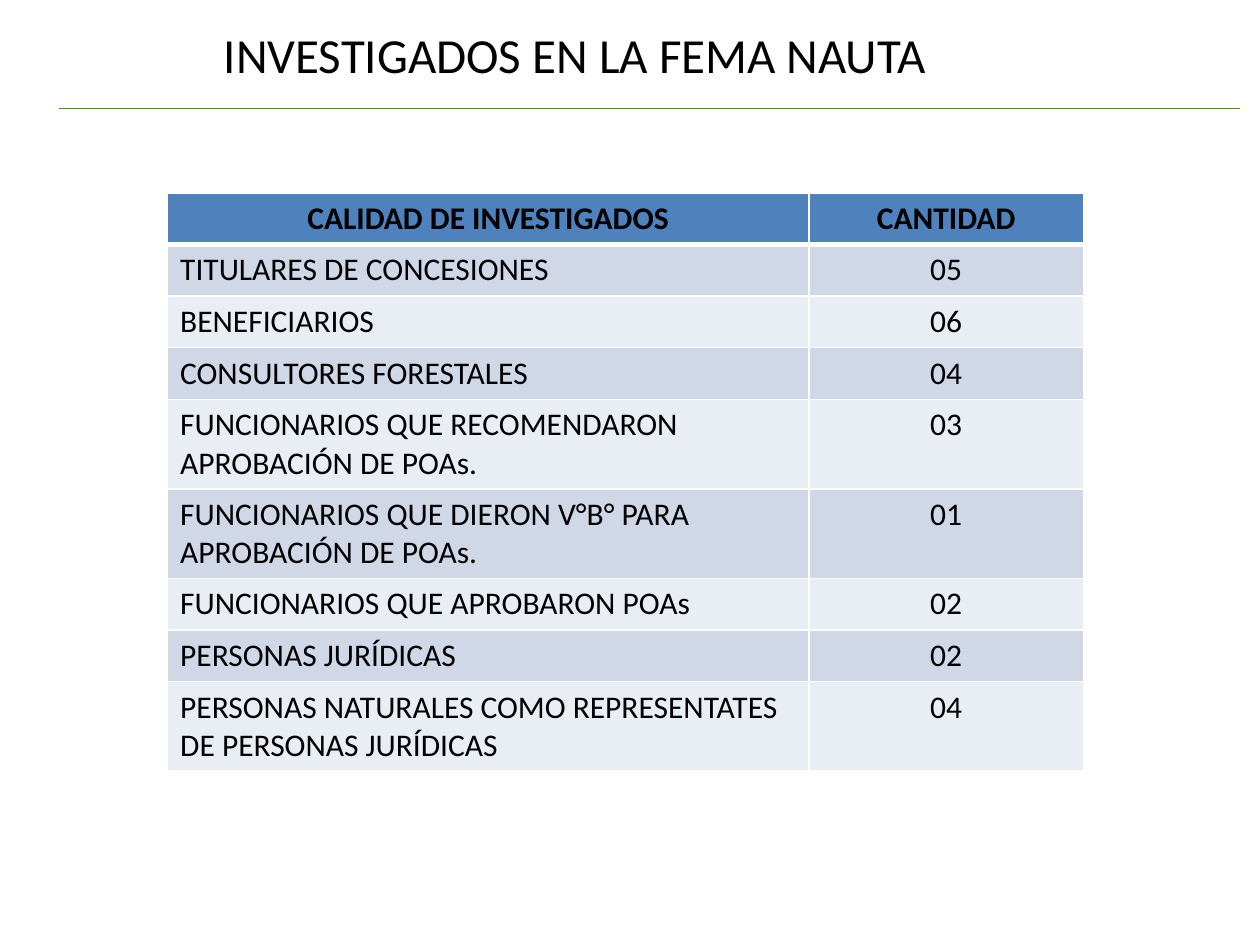
from dataclasses import dataclass

from lxml.etree import SubElement
from pptx import Presentation
from pptx.dml.color import RGBColor
from pptx.enum.shapes import MSO_CONNECTOR
from pptx.enum.text import MSO_ANCHOR, PP_ALIGN
from pptx.oxml.ns import qn
from pptx.util import Emu, Inches, Pt


@dataclass(frozen=True)
class Theme:
    """Colours, typeface and type sizes of the slide."""
    font: str = "Calibri"
    text: str = "000000"
    background: str = "FFFFFF"
    rule: str = "548235"
    header: str = "4F81BD"
    bands: tuple = ("D0D8E8", "E9EDF4")
    border: str = "FFFFFF"
    title_size: int = 28
    table_size: int = 18


@dataclass(frozen=True)
class Box:
    """A region given as shares of the slide's width and height."""
    left: float
    top: float
    width: float
    height: float

    def place(self, presentation):
        """Return left, top, width and height in slide units."""
        across, down = presentation.slide_width, presentation.slide_height
        return (Emu(int(self.left * across)), Emu(int(self.top * down)),
                Emu(int(self.width * across)), Emu(int(self.height * down)))


THEME = Theme()
TITLE_BOX = Box(0.031, 0, 0.85, 0.115)
RULE_BOX = Box(0.047, 0.115, 0.937, 0)
TABLE_BOX = Box(0.133, 0.204, 0.727, 0.492)
COLUMN_SHARES = (0.7, 0.3)
HEADINGS = ("CALIDAD DE INVESTIGADOS", "CANTIDAD")
INVESTIGATED = (
    ("TITULARES DE CONCESIONES", "05"),
    ("BENEFICIARIOS", "06"),
    ("CONSULTORES FORESTALES", "04"),
    ("FUNCIONARIOS QUE RECOMENDARON APROBACIÓN DE POAs.", "03"),
    ("FUNCIONARIOS QUE DIERON V°B° PARA APROBACIÓN DE POAs.", "01"),
    ("FUNCIONARIOS QUE APROBARON POAs", "02"),
    ("PERSONAS JURÍDICAS", "02"),
    ("PERSONAS NATURALES COMO REPRESENTATES DE PERSONAS JURÍDICAS", "04"),
)


def write_text(frame, text, *, size, bold=False, align=PP_ALIGN.LEFT):
    """Write one formatted paragraph into a text frame."""
    frame.word_wrap = True
    paragraph = frame.paragraphs[0]
    paragraph.alignment = align
    run = paragraph.add_run()
    run.text = text
    run.font.name = THEME.font
    run.font.size = Pt(size)
    run.font.bold = bold
    run.font.color.rgb = RGBColor.from_string(THEME.text)


def set_borders(cell, bottom=1, top=1):
    """Draw the four borders of a cell, with widths in points."""
    properties = cell._tc.get_or_add_tcPr()
    for side, width in (("L", 1), ("R", 1), ("T", top), ("B", bottom)):
        line = SubElement(properties, qn(f"a:ln{side}"), w=str(Pt(width)))
        fill = SubElement(line, qn("a:solidFill"))
        SubElement(fill, qn("a:srgbClr"), val=THEME.border)


def add_title(presentation, slide, box, text):
    """Fill the title placeholder within its box."""
    title = slide.shapes.title
    title.left, title.top, title.width, title.height = box.place(presentation)
    title.text_frame.vertical_anchor = MSO_ANCHOR.MIDDLE
    write_text(title.text_frame, text, size=THEME.title_size,
               align=PP_ALIGN.CENTER)


def add_rule(presentation, slide, box):
    """Draw the thin rule under the title."""
    left, top, width, height = box.place(presentation)
    rule = slide.shapes.add_connector(
        MSO_CONNECTOR.STRAIGHT, left, top, left + width, top + height)
    rule.line.color.rgb = RGBColor.from_string(THEME.rule)
    rule.line.width = Pt(0.5)
    SubElement(rule._element.spPr, qn("a:effectLst"))


def add_investigated_table(presentation, slide, box):
    """Build the banded table of people investigated and their count."""
    rows = (HEADINGS,) + INVESTIGATED
    left, top, width, height = box.place(presentation)
    table = slide.shapes.add_table(
        len(rows), len(HEADINGS), left, top, width, height).table
    for column, share in zip(table.columns, COLUMN_SHARES):
        column.width = Emu(int(width * share))
    for row_index, values in enumerate(rows):
        table.rows[row_index].height = Emu(height // len(rows))
        is_header = row_index == 0
        color = THEME.header if is_header else THEME.bands[(row_index - 1) % 2]
        for column_index, value in enumerate(values):
            cell = table.cell(row_index, column_index)
            set_borders(cell, bottom=3 if is_header else 1,
                        top=3 if row_index == 1 else 1)
            cell.fill.solid()
            cell.fill.fore_color.rgb = RGBColor.from_string(color)
            centred = is_header or column_index == 1
            write_text(cell.text_frame, value, size=THEME.table_size,
                       bold=is_header,
                       align=PP_ALIGN.CENTER if centred else PP_ALIGN.LEFT)


def main():
    """Build and save the presentation."""
    presentation = Presentation()
    presentation.slide_width = Inches(10)
    presentation.slide_height = Inches(7.5)
    slide = presentation.slides.add_slide(presentation.slide_layouts[0])
    slide.background.fill.solid()
    slide.background.fill.fore_color.rgb = RGBColor.from_string(THEME.background)
    subtitle = slide.placeholders[1]._element
    subtitle.getparent().remove(subtitle)
    add_rule(presentation, slide, RULE_BOX)
    add_title(presentation, slide, TITLE_BOX, "INVESTIGADOS EN LA FEMA NAUTA")
    add_investigated_table(presentation, slide, TABLE_BOX)
    presentation.save("out.pptx")


if __name__ == "__main__":
    main()
